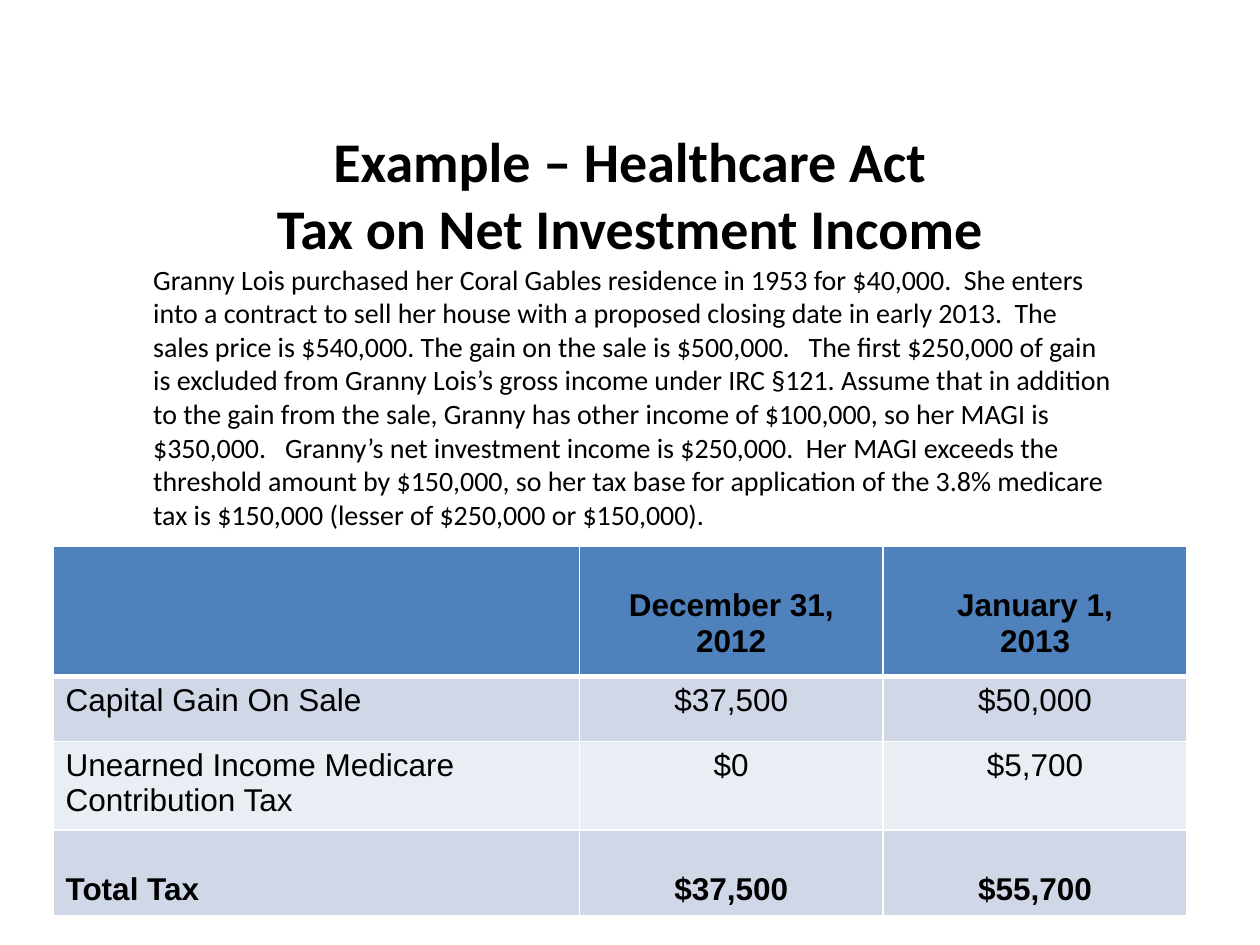
from dataclasses import dataclass
from typing import NamedTuple

from lxml import etree
from pptx import Presentation
from pptx import util as u
from pptx.dml.color import RGBColor
from pptx.enum import text
from pptx.oxml import ns


class Box(NamedTuple):
    """A region in centimetres."""
    left: float
    top: float
    width: float
    height: float

    def lengths(self):
        """Return the region as slide lengths."""
        return [u.Cm(value) for value in self]


@dataclass(frozen=True)
class Theme:
    """Colours, fonts and type sizes of the slide."""
    ink: str = "000000"
    rule: str = "FFFFFF"
    header: str = "4F81BD"
    bands: tuple = ("D0D8E8", "E9EDF4")
    prose_font: str = "Calibri"
    table_font: str = "Arial"
    title_size: int = 32
    story_size: int = 16
    table_size: int = 18


THEME = Theme()
LEFT, CENTER = text.PP_ALIGN.LEFT, text.PP_ALIGN.CENTER
COLUMN_SHARES = (0.464, 0.268, 0.268)
ROW_HEIGHTS = (2.62, 1.31, 1.68, 1.73)
LOWERED_INSET = 0.84
TITLE = ("Example – Healthcare Act", "Tax on Net Investment Income")
STORY = (
    "Granny Lois purchased her Coral Gables residence in 1953 for $40,000.  "
    "She enters into a contract to sell her house with a proposed closing date "
    "in early 2013.  The sales price is $540,000. The gain on the sale is "
    "$500,000.   The first $250,000 of gain is excluded from Granny Lois’s gross "
    "income under IRC §121. Assume that in addition to the gain from the sale, "
    "Granny has other income of $100,000, so her MAGI is $350,000.   Granny’s net "
    "investment income is $250,000.  Her MAGI exceeds the threshold amount by "
    "$150,000, so her tax base for application of the 3.8% medicare tax is "
    "$150,000 (lesser of $250,000 or $150,000)."
)
TAX_ROWS = (
    ("", "December 31, 2012", "January 1,\n2013"),
    ("Capital Gain On Sale", "$37,500", "$50,000"),
    ("Unearned Income Medicare Contribution Tax", "$0", "$5,700"),
    ("Total Tax", "$37,500", "$55,700"),
)


def add_span(para, wording, font, size, bold=False):
    """Add one styled run to a paragraph."""
    span = para.add_run()
    span.text = wording
    span.font.name = font
    span.font.size = u.Pt(size)
    span.font.bold = bold
    span.font.color.rgb = RGBColor.from_string(THEME.ink)


def add_frame(page, box):
    """Add a wrapping text box and return its frame."""
    frame = page.shapes.add_textbox(*box.lengths()).text_frame
    frame.word_wrap = True
    return frame


def add_title(page, box):
    """Place the centred two-line title."""
    frame = add_frame(page, box)
    frame.vertical_anchor = text.MSO_ANCHOR.MIDDLE
    para = frame.paragraphs[0]
    para.alignment = CENTER
    for index, line in enumerate(TITLE):
        if index:
            para.add_line_break()
        add_span(para, line, THEME.prose_font, THEME.title_size, bold=True)


def add_story(page, box):
    """Place the worked example."""
    para = add_frame(page, box).paragraphs[0]
    add_span(para, STORY, THEME.prose_font, THEME.story_size)


def rule_cell(cell, bottom_points):
    """Draw the four borders of a cell, placed ahead of its fill."""
    properties = cell._tc.get_or_add_tcPr()
    widths = {"lnL": 1, "lnR": 1, "lnT": 1, "lnB": bottom_points}
    for index, (side, points) in enumerate(widths.items()):
        line = etree.Element(ns.qn(f"a:{side}"), w=str(u.Pt(points)))
        fill = etree.SubElement(line, ns.qn("a:solidFill"))
        etree.SubElement(fill, ns.qn("a:srgbClr"), val=THEME.rule)
        properties.insert(index, line)


def fill_cell(cell, wording, colour, alignment, bold):
    """Fill a cell with its colour and its paragraphs."""
    cell.fill.solid()
    cell.fill.fore_color.rgb = RGBColor.from_string(colour)
    if bold and wording:
        cell.margin_top = u.Cm(LOWERED_INSET)
    for index, line in enumerate(wording.split("\n")):
        frame = cell.text_frame
        para = frame.add_paragraph() if index else frame.paragraphs[0]
        para.alignment = alignment
        if line:
            add_span(para, line, THEME.table_font, THEME.table_size, bold)


def add_tax_table(page, box):
    """Place the comparison of the tax in both years."""
    shape = page.shapes.add_table(len(TAX_ROWS), len(COLUMN_SHARES), *box.lengths())
    table = shape.table
    for column, share in zip(table.columns, COLUMN_SHARES):
        column.width = u.Cm(box.width * share)
    for row, height in zip(table.rows, ROW_HEIGHTS):
        row.height = u.Cm(height)
    for row_index, wordings in enumerate(TAX_ROWS):
        is_header = row_index == 0
        bold = is_header or row_index == len(TAX_ROWS) - 1
        colour = THEME.header if is_header else THEME.bands[(row_index - 1) % 2]
        for column_index, wording in enumerate(wordings):
            cell = table.cell(row_index, column_index)
            alignment = CENTER if column_index else LEFT
            fill_cell(cell, wording, colour, alignment, bold)
            rule_cell(cell, 3 if is_header else 1)


def main():
    """Build and save the slide."""
    deck = Presentation()
    deck.slide_width, deck.slide_height = u.Cm(25.4), u.Cm(19.05)
    page = deck.slides.add_slide(deck.slide_layouts[6])
    add_title(page, Box(1.27, 2.31, 22.86, 3.18))
    add_tax_table(page, Box(1.07, 11.02, 22.86, sum(ROW_HEIGHTS)))
    add_story(page, Box(2.84, 5.16, 19.89, 5.74))
    deck.save("out.pptx")


if __name__ == "__main__":
    main()
